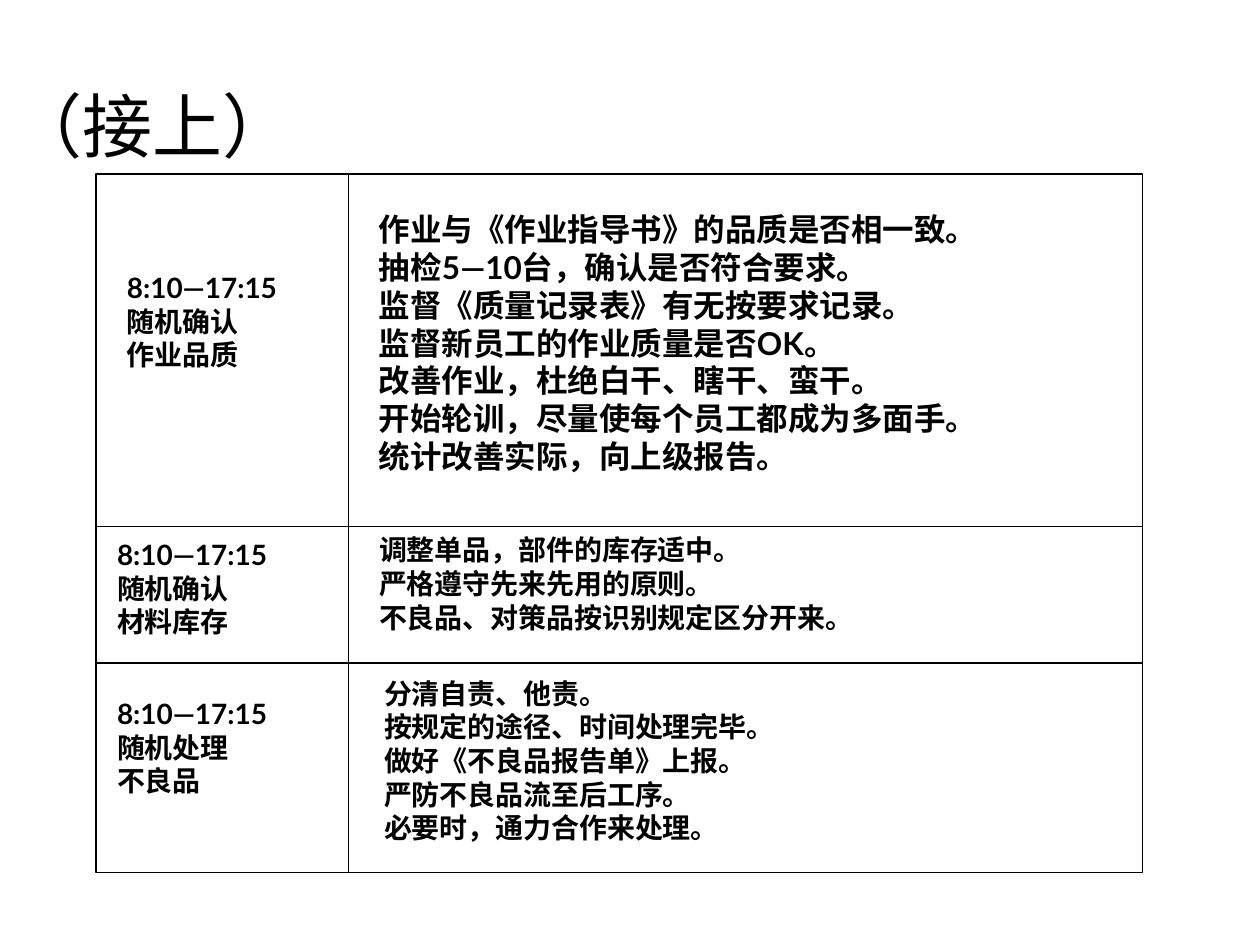
from pptx import Presentation
from pptx.dml.color import RGBColor
from pptx.enum import shapes as sh, text as tx
from pptx.oxml import xmlchemy as xc
from pptx.util import Pt

BLACK = RGBColor(0, 0, 0)
LEFT, SPLIT, RIGHT = 54.9, 199, 652.7
TOP, BOTTOM = 99.4, 498.6
RULES = (301, 378.8)
HOURS = "8:10—17:15"

ROWS = [
    ((65.5, 151.2, 112.3, 64.8), ["随机确认", "作业品质"],
     (209.5, 116.6, 388, 158.4), 18, True,
     ["作业与《作业指导书》的品质是否相一致。",
      "抽检5—10台，确认是否符合要求。",
      "监督《质量记录表》有无按要求记录。",
      "监督新员工的作业质量是否OK。",
      "改善作业，杜绝白干、瞎干、蛮干。",
      "开始轮训，尽量使每个员工都成为多面手。",
      "统计改善实际，向上级报告。"]),
    ((59.8, 303.8, 112.3, 64.8), ["随机确认", "材料库存"],
     (209.5, 301, 288.7, 64.8), 16, False,
     ["调整单品，部件的库存适中。",
      "严格遵守先来先用的原则。",
      "不良品、对策品按识别规定区分开来。"]),
    ((59.8, 394.6, 112.3, 64.8), ["随机处理", "不良品"],
     (212.4, 383, 240.5, 103.7), 16, False,
     ["分清自责、他责。",
      "按规定的途径、时间处理完毕。",
      "做好《不良品报告单》上报。",
      "严防不良品流至后工序。",
      "必要时，通力合作来处理。"]),
]


def add_text(slide, box, lines, size, face="Lato", bold=True, wrap=False):
    """Add a text box with one paragraph per line."""
    frame = slide.shapes.add_textbox(*map(Pt, box)).text_frame
    frame.word_wrap = wrap
    frame.text = "\n".join(lines)
    for para in frame.paragraphs:
        para.font.name = face
        para.font.size = Pt(size)
        para.font.bold = bold
        para.font.color.rgb = BLACK
    return frame


def add_frame(slide):
    """Add the outer border of the grid."""
    rect = slide.shapes.add_shape(
        sh.MSO_SHAPE.RECTANGLE, Pt(LEFT), Pt(TOP),
        Pt(RIGHT - LEFT), Pt(BOTTOM - TOP))
    rect.shadow.inherit = False
    rect.fill.background()
    rect.line.color.rgb = BLACK
    rect.line.width = Pt(0.75)


def add_rule(slide, *ends):
    """Add a thin black line between two points."""
    rule = slide.shapes.add_connector(
        sh.MSO_CONNECTOR.STRAIGHT, *map(Pt, ends))
    rule.line.color.rgb = BLACK
    rule.line.width = Pt(0.75)
    props = rule._element.spPr
    props.append(xc.OxmlElement("a:effectLst"))


def main():
    """Build and save the slide."""
    deck = Presentation()
    deck.slide_width, deck.slide_height = Pt(720), Pt(540)
    slide = deck.slides.add_slide(deck.slide_layouts[6])
    title = add_text(slide, (0, 43.2, 613.4, 55.4), ["（接上）"], 40,
                     "Arial", False, True)
    title.vertical_anchor = tx.MSO_ANCHOR.BOTTOM
    add_frame(slide)
    add_rule(slide, SPLIT, TOP, SPLIT, BOTTOM)
    for y in RULES:
        add_rule(slide, LEFT, y, RIGHT, y)
    for spot, task, area, size, wrap, notes in ROWS:
        add_text(slide, spot, [HOURS, *task], 16)
        add_text(slide, area, notes, size, wrap=wrap).auto_size = (
            tx.MSO_AUTO_SIZE.SHAPE_TO_FIT_TEXT)
    deck.save("out.pptx")


if __name__ == "__main__":
    main()
